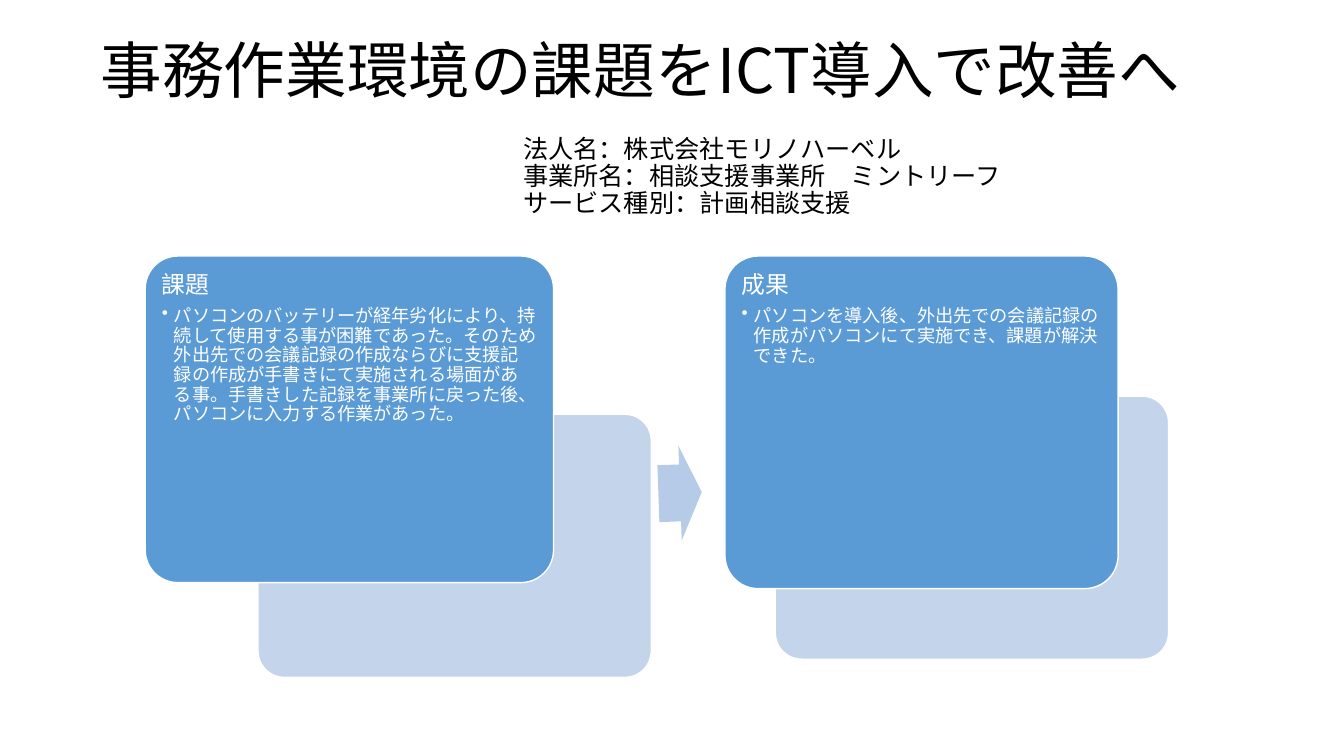
from lxml import etree
from pptx import Presentation
from pptx import util as u
from pptx.dml.color import RGBColor
from pptx.enum import shapes, text
from pptx.oxml import ns

PX = 9144
FONT = "Noto Sans CJK JP"
BLACK = RGBColor(0x00, 0x00, 0x00)
WHITE = RGBColor(0xFF, 0xFF, 0xFF)
BLUE = RGBColor(0x5B, 0x9B, 0xD5)
PALE_BLUE = RGBColor(0xC4, 0xD5, 0xEB)
ARROW_BLUE = RGBColor(0xB5, 0xCB, 0xE7)

TITLE = "事務作業環境の課題をICT導入で改善へ"
OFFICE = [
    "法人名：株式会社モリノハーベル",
    "事業所名：相談支援事業所　ミントリーフ",
    "サービス種別：計画相談支援",
]
ISSUE = (
    "パソコンのバッテリーが経年劣化により、持続して使用する事が困難であった。"
    "そのため外出先での会議記録の作成ならびに支援記録の作成が手書きにて実施される場面がある事。"
    "手書きした記録を事業所に戻った後、パソコンに入力する作業があった。"
)
RESULT = "パソコンを導入後、外出先での会議記録の作成がパソコンにて実施でき、課題が解決できた。"


def px(*lengths):
    """Turn pixel lengths into EMU."""
    return [u.Emu(length * PX) for length in lengths]


def write_line(paragraph, words, size, color, after=0):
    """Write one paragraph in the slide font."""
    layout = {"alignment": text.PP_ALIGN.LEFT, "line_spacing": 0.9,
              "space_before": u.Pt(0), "space_after": u.Pt(after)}
    for key, value in layout.items():
        setattr(paragraph, key, value)
    run = paragraph.add_run()
    run.text = words
    run.font.size = u.Pt(size)
    run.font.color.rgb = color
    run.font.name = FONT
    etree.SubElement(run.font._element, ns.qn("a:ea"), typeface=FONT)


def add_bullet(paragraph):
    """Give a paragraph a hanging bullet."""
    paragraph.level = 1
    properties = paragraph._p.get_or_add_pPr()
    properties.set("marL", str(12 * PX))
    properties.set("indent", str(-12 * PX))
    etree.SubElement(properties, ns.qn("a:buChar"), char="•")


def add_heading(slide, box, lines, size):
    """Place vertically centred black lines in a box."""
    frame = slide.shapes.add_textbox(*px(*box)).text_frame
    frame.word_wrap = True
    frame.vertical_anchor = text.MSO_ANCHOR.MIDDLE
    for index, words in enumerate(lines):
        paragraph = frame.add_paragraph() if index else frame.paragraphs[0]
        write_line(paragraph, words, size, BLACK)


def add_block(slide, kind, box, fill, adjustments, outlined=True):
    """Place one filled shape without shadow."""
    block = slide.shapes.add_shape(kind, *px(*box))
    block.shadow.inherit = False
    block.fill.solid()
    block.fill.fore_color.rgb = fill
    if outlined:
        block.line.color.rgb = WHITE
        block.line.width = u.Pt(1)
    else:
        block.line.fill.background()
    for index, value in enumerate(adjustments):
        block.adjustments[index] = value
    return block


def add_panel(slide, box, backing_offset, heading, detail):
    """Place a text card over its pale backing card."""
    left, top, _, _ = box
    right_shift, down_shift = backing_offset
    rounded = shapes.MSO_SHAPE.ROUNDED_RECTANGLE
    backing = (left + right_shift, top + down_shift, 390, 261)
    add_block(slide, rounded, backing, PALE_BLUE, [0.1])
    frame = add_block(slide, rounded, box, BLUE, [0.1]).text_frame
    margin, = px(7)
    layout = {"word_wrap": True, "vertical_anchor": text.MSO_ANCHOR.TOP,
              "margin_left": margin, "margin_right": margin,
              "margin_top": margin, "margin_bottom": margin}
    for key, value in layout.items():
        setattr(frame, key, value)
    write_line(frame.paragraphs[0], heading, 17, WHITE, after=6)
    bullet = frame.add_paragraph()
    write_line(bullet, detail, 13, WHITE, after=2)
    add_bullet(bullet)


def add_arrow(slide, box):
    """Place the slightly tilted arrow between the panels."""
    arrow = add_block(slide, shapes.MSO_SHAPE.RIGHT_ARROW, box, ARROW_BLUE,
                      [0.6, 0.5], outlined=False)
    arrow.rotation = 358


def main():
    """Build and save the slide."""
    deck = Presentation()
    deck.slide_width, deck.slide_height = px(1333, 750)
    slide = deck.slides.add_slide(deck.slide_layouts[6])
    add_heading(slide, (90, 23, 1150, 99), [TITLE], 44)
    add_panel(slide, (144, 254, 405, 324), (112, 157), "課題", ISSUE)
    add_arrow(slide, (653, 442, 43, 94))
    add_panel(slide, (719, 254, 390, 330), (50, 139), "成果", RESULT)
    add_heading(slide, (509, 122, 621, 108), OFFICE, 18)
    deck.save("out.pptx")


if __name__ == "__main__":
    main()
